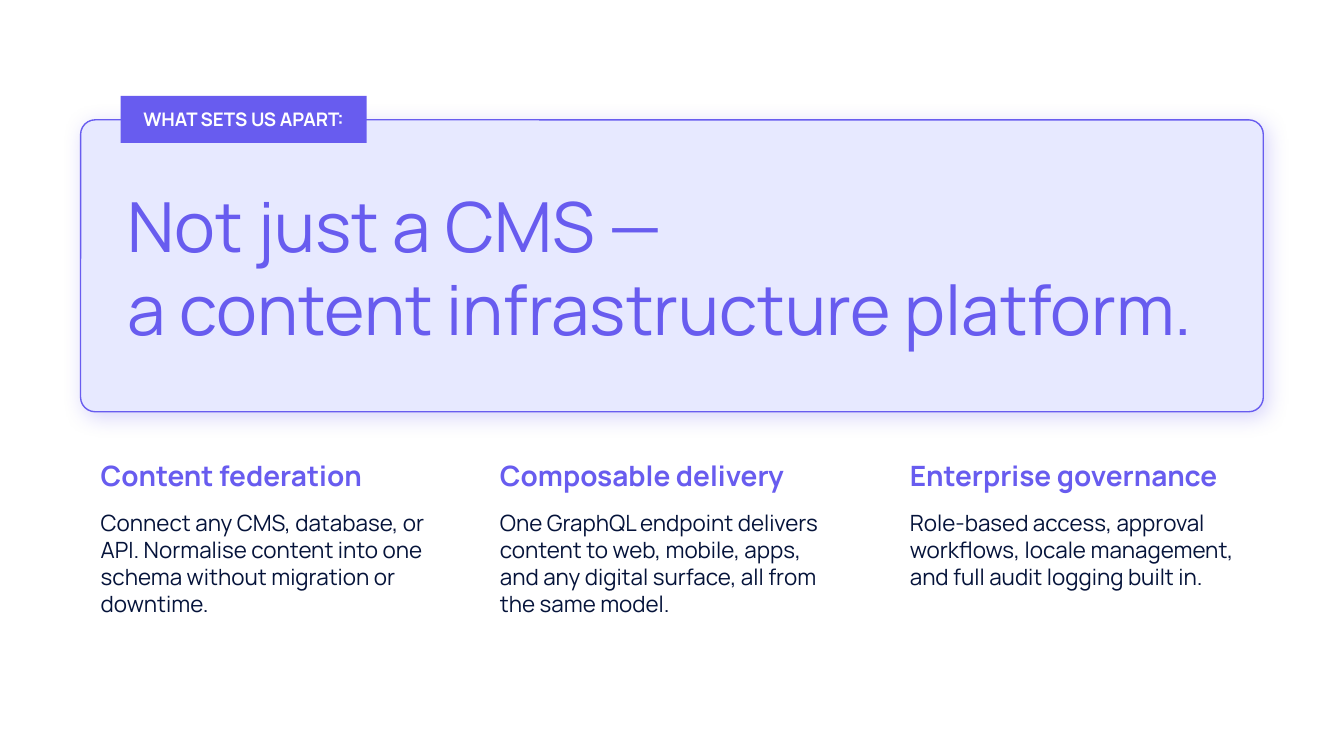
"""Build the "What sets us apart" slide with a headline panel and three columns."""
from lxml.etree import SubElement
from pptx import Presentation
from pptx.dml.color import RGBColor
from pptx.enum.shapes import MSO_SHAPE
from pptx.enum.text import MSO_ANCHOR, PP_ALIGN
from pptx.oxml.ns import qn
from pptx.util import Pt

COLORS = {"violet": "685CEF", "lavender": "E7E9FF", "navy": "05133A", "white": "FFFFFF"}
STYLES = {
    "headline": {"size": Pt(37)},
    "heading": {"size": Pt(15), "bold": True},
    "body": {"size": Pt(12)},
    "label": {"size": Pt(10), "bold": True},
}
LABEL = "WHAT SETS US APART:"
HEADLINE = ["Not just a CMS — ", "a content infrastructure platform."]
COLUMNS = [
    (54, "Content federation",
     "Connect any CMS, database, or API. Normalise content into one schema "
     "without migration or downtime."),
    (267.84, "Composable delivery",
     "One GraphQL endpoint delivers content to web, mobile, apps, and any "
     "digital surface, all from the same model."),
    (487.44, "Enterprise governance",
     "Role-based access, approval workflows, locale management, and full "
     "audit logging built in."),
]


def color(name):
    return RGBColor.from_string(COLORS[name])


def write(shape, lines, style, color_name, anchor=MSO_ANCHOR.MIDDLE, align=PP_ALIGN.LEFT, inset=0):
    frame = shape.text_frame
    settings = {"word_wrap": True, "vertical_anchor": anchor}
    settings.update({f"margin_{side}": Pt(inset) for side in ("left", "top", "right", "bottom")})
    for name, value in settings.items():
        setattr(frame, name, value)
    paragraph = frame.paragraphs[0]
    paragraph.alignment = align
    for index, line in enumerate(lines):
        if index:
            paragraph.add_line_break()
        run = paragraph.add_run()
        run.text = line
        for name, value in {"name": "Manrope", **STYLES[style]}.items():
            setattr(run.font, name, value)
        run.font.color.rgb = color(color_name)


def add_text(slide, box, *content, **options):
    write(slide.shapes.add_textbox(*map(Pt, box)), *content, **options)


def add_box(slide, kind, box, fill):
    shape = slide.shapes.add_shape(kind, *map(Pt, box))
    shape.shadow.inherit = False
    shape.fill.solid()
    shape.fill.fore_color.rgb = color(fill)
    shape.line.fill.background()
    return shape


def add_glow(shape, name):
    effects = shape._element.spPr.find(qn("a:effectLst"))
    shadow = SubElement(effects, qn("a:outerShdw"), blurRad=str(Pt(11.2)), dist=str(Pt(3)),
                        dir=str(45 * 60000), algn="bl", rotWithShape="0")
    tint = SubElement(shadow, qn("a:srgbClr"), val=COLORS[name])
    SubElement(tint, qn("a:alpha"), val="25000")


def main():
    presentation = Presentation()
    presentation.slide_width, presentation.slide_height = Pt(720), Pt(405)
    slide = presentation.slides.add_slide(presentation.slide_layouts[6])

    panel = add_box(slide, MSO_SHAPE.ROUNDED_RECTANGLE, (43.2, 64.2, 633.6, 156.4), "lavender")
    panel.adjustments[0] = 0.05
    panel.line.color.rgb = color("violet")
    panel.line.width = Pt(0.75)
    add_glow(panel, "violet")
    add_text(slide, (68.4, 101.5, 587.5, 82.8), HEADLINE, "headline", "violet")

    for left, heading, body in COLUMNS:
        add_text(slide, (left, 238.3, 180, 32.4), [heading], "heading", "violet")
        add_text(slide, (left, 272.9, 180, 89.3), [body], "body", "navy", anchor=MSO_ANCHOR.TOP)

    tag = add_box(slide, MSO_SHAPE.RECTANGLE, (64.6, 51.3, 131.8, 25.2), "violet")
    write(tag, [LABEL], "label", "white", align=PP_ALIGN.CENTER, inset=7.2)
    presentation.save("out.pptx")


if __name__ == "__main__":
    main()
